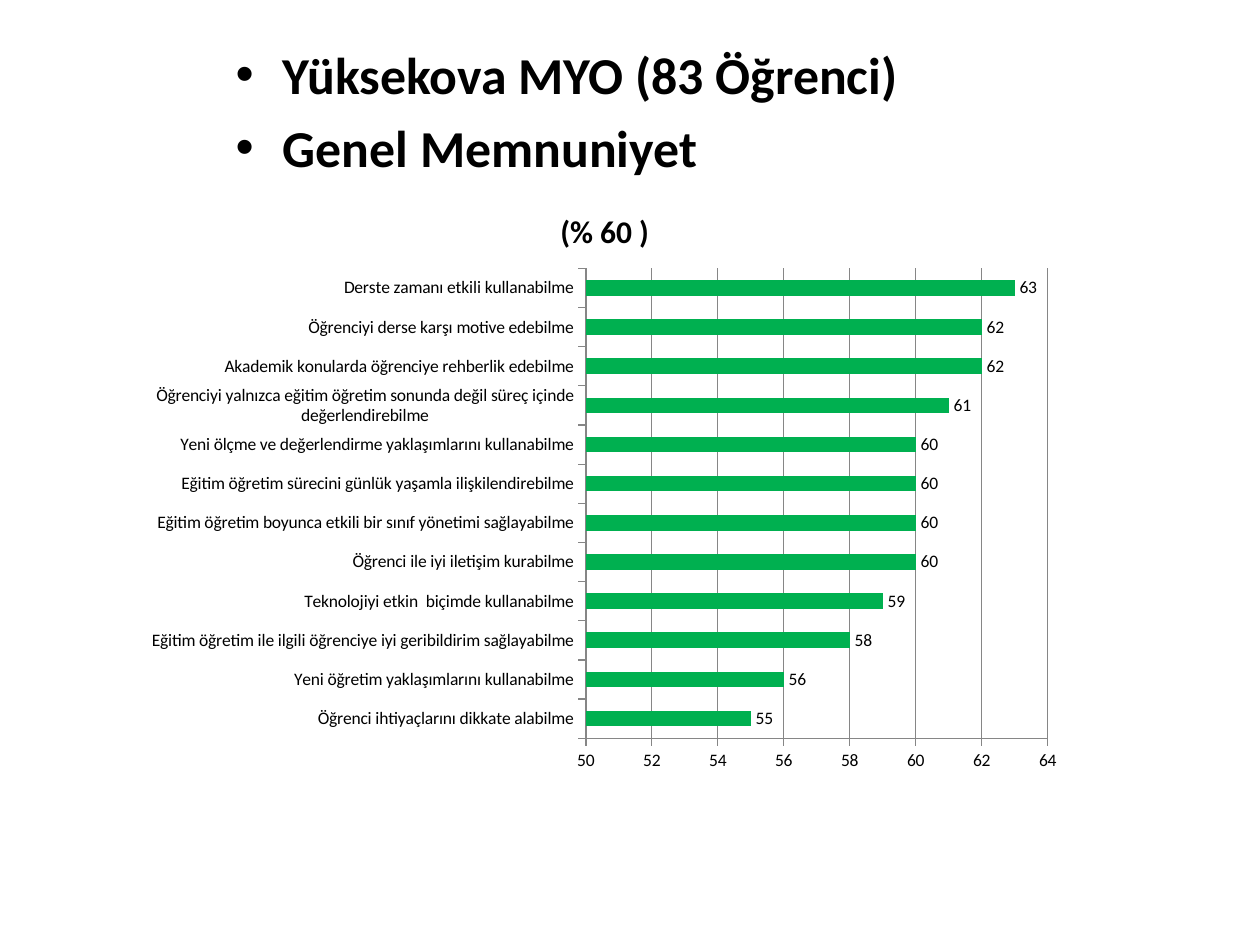
from lxml import etree
from pptx import Presentation
from pptx import util as u
from pptx.chart.data import CategoryChartData
from pptx.dml.color import RGBColor
from pptx.enum import chart as ch
from pptx.enum import text
from pptx.oxml import ns

COLORS = {"text": "000000", "bar": "00B050", "line": "868686"}
FONT = "Calibri"
HEADINGS = ["Yüksekova MYO (83 Öğrenci)", "Genel Memnuniyet"]
SCORES = [
    ("Öğrenci ihtiyaçlarını dikkate alabilme", 55),
    ("Yeni öğretim yaklaşımlarını kullanabilme", 56),
    ("Eğitim öğretim ile ilgili öğrenciye iyi geribildirim sağlayabilme", 58),
    ("Teknolojiyi etkin  biçimde kullanabilme", 59),
    ("Öğrenci ile iyi iletişim kurabilme", 60),
    ("Eğitim öğretim boyunca etkili bir sınıf yönetimi sağlayabilme", 60),
    ("Eğitim öğretim sürecini günlük yaşamla ilişkilendirebilme", 60),
    ("Yeni ölçme ve değerlendirme yaklaşımlarını kullanabilme", 60),
    ("Öğrenciyi yalnızca eğitim öğretim sonunda değil süreç içinde değerlendirebilme", 61),
    ("Akademik konularda öğrenciye rehberlik edebilme", 62),
    ("Öğrenciyi derse karşı motive edebilme", 62),
    ("Derste zamanı etkili kullanabilme", 63),
]
PLOT_AREA = {"x": 0.48, "y": 0.14, "w": 0.49, "h": 0.79}


def write(para, words, size, bold=True):
    span = para.add_run()
    span.text = words
    span.font.name = FONT
    span.font.size = u.Pt(size)
    span.font.bold = bold
    span.font.color.rgb = RGBColor.from_string(COLORS["text"])


deck = Presentation()
deck.slide_width, deck.slide_height = u.Inches(10), u.Inches(7.5)
page = deck.slides.add_slide(deck.slide_layouts[1])
title, body = page.placeholders
title.element.getparent().remove(title.element)

# Headings
body.left, body.top = u.Inches(1.77), u.Inches(0.29)
body.width, body.height = u.Inches(6.54), u.Inches(1.18)
frame = body.text_frame
frame.auto_size = text.MSO_AUTO_SIZE.NONE
for index, heading in enumerate(HEADINGS):
    para = frame.add_paragraph() if index else frame.paragraphs[0]
    write(para, heading, size=29.6)

# Satisfaction chart
data = CategoryChartData(number_format="0")
data.categories = [name for name, score in SCORES]
data.add_series("Series 1", [score for name, score in SCORES])
chart = page.shapes.add_chart(
    ch.XL_CHART_TYPE.BAR_CLUSTERED,
    u.Inches(1.06), u.Inches(1.47), u.Inches(7.48), u.Inches(4.72), data,
).chart
chart.has_legend = False
chart.font.name = FONT
chart.font.size = u.Pt(10)
chart.font.color.rgb = RGBColor.from_string(COLORS["text"])
chart.has_title = True
write(chart.chart_title.text_frame.paragraphs[0], "(% 60 )", size=18)
chart.chart_title.include_in_layout = False

values, categories = chart.value_axis, chart.category_axis
values.minimum_scale, values.maximum_scale, values.major_unit = 50, 64, 2
values.has_major_gridlines = True
values.tick_labels.number_format = "0"
values.tick_labels.number_format_is_linked = False
for axis in (values, categories):
    axis.major_tick_mark = ch.XL_TICK_MARK.OUTSIDE
for part in (values, categories, values.major_gridlines):
    part.format.line.color.rgb = RGBColor.from_string(COLORS["line"])
    part.format.line.width = u.Pt(0.75)

plot = chart.plots[0]
plot.gap_width = 150
plot.vary_by_categories = False
fill = plot.series[0].format.fill
fill.solid()
fill.fore_color.rgb = RGBColor.from_string(COLORS["bar"])
plot.has_data_labels = True
labels = plot.data_labels
labels.show_value = True
labels.number_format = "0"
labels.number_format_is_linked = False
labels.position = ch.XL_LABEL_POSITION.OUTSIDE_END

# Fixed plot area, as shares of the chart
area = chart.element.find(".//" + ns.qn("c:plotArea"))
old_layout = area.find(ns.qn("c:layout"))
if old_layout is not None:
    area.remove(old_layout)
layout = etree.Element(ns.qn("c:layout"))
area.insert(0, layout)
manual = etree.SubElement(layout, ns.qn("c:manualLayout"))
settings = {"layoutTarget": "inner", "xMode": "edge", "yMode": "edge", **PLOT_AREA}
for name, value in settings.items():
    etree.SubElement(manual, ns.qn("c:" + name)).set("val", str(value))

deck.save("out.pptx")
